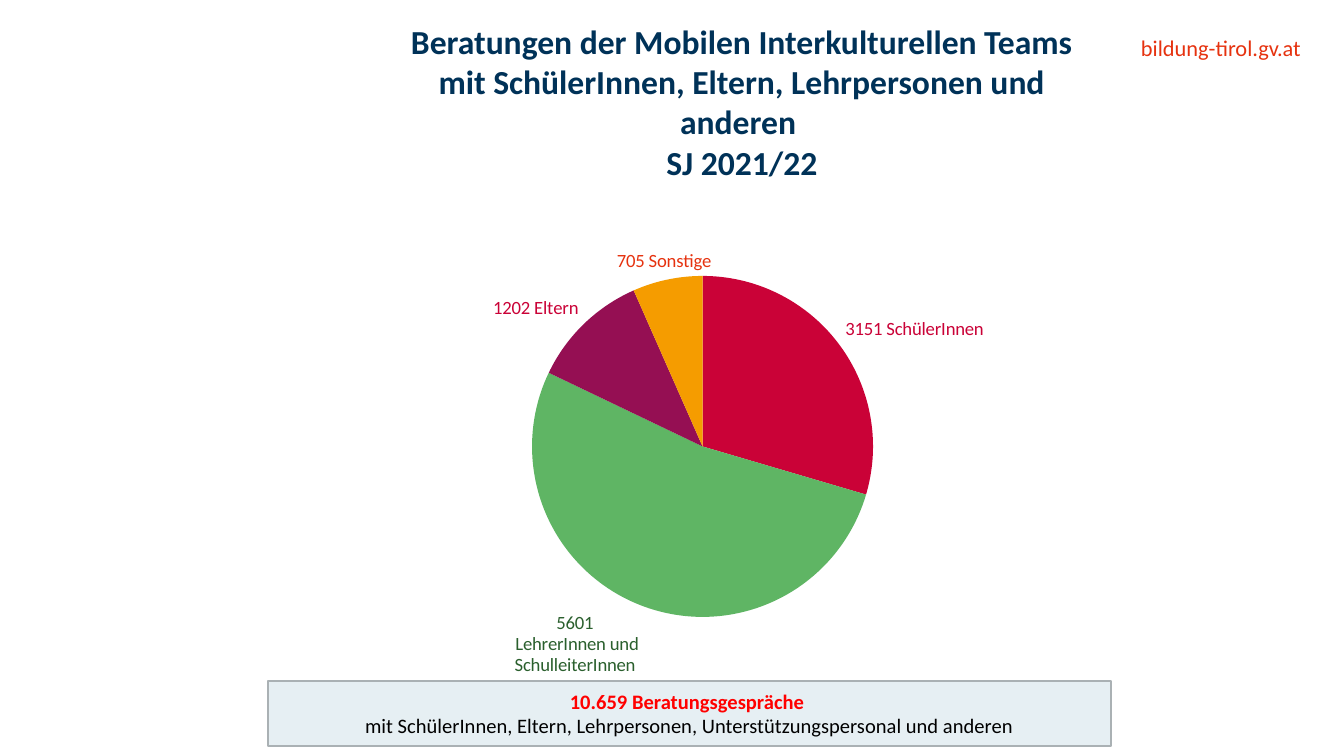
import pptx
import pptx.chart.data
import pptx.dml.color
import pptx.enum.chart
import pptx.enum.shapes
import pptx.enum.text
import pptx.util
import lxml.etree

PX = 914400 / 134.4
C = "{http://schemas.openxmlformats.org/drawingml/2006/chart}"
ALIGN = pptx.enum.text.PP_ALIGN


def style(font, colour, **values):
    font.color.rgb = pptx.dml.color.RGBColor.from_string(colour)
    for key, value in {"name": "Calibri", **values}.items():
        setattr(font, key, value)


def manual_layout(**values):
    layout = lxml.etree.Element(C + "layout")
    manual = lxml.etree.SubElement(layout, C + "manualLayout")
    for tag, value in values.items():
        lxml.etree.SubElement(manual, C + tag, val=str(value))
    return layout


deck = pptx.Presentation()
deck.slide_width, deck.slide_height = round(1344 * PX), round(756 * PX)
slide = deck.slides.add_slide(deck.slide_layouts[6])

# Web address
address = slide.shapes.add_textbox(
    *[round(length * PX) for length in (977, 34, 324, 27)]).text_frame
for key in ("margin_left", "margin_top", "margin_right", "margin_bottom"):
    setattr(address, key, 0)
address.word_wrap = True
address.text = "bildung-tirol.gv.at"
address.paragraphs[0].alignment = ALIGN.RIGHT
style(address.paragraphs[0].runs[0].font, "E6320F", size=pptx.util.Pt(12))

# Pie of consultations: category, count, slice colour, label colour, label text
groups = [
    ("SchülerInnen", 3151, "CA0237", "CA0237", "3151 SchülerInnen"),
    ("LehrerInnen und SchulleiterInnen", 5601, "5FB564", "2A5F2D",
     "5601\n LehrerInnen und SchulleiterInnen"),
    ("Eltern", 1202, "950F53", "CA0237", "1202 Eltern"),
    ("Sonstige", 705, "F59C00", "E6320F", "705 Sonstige"),
]
counts = pptx.chart.data.CategoryChartData(number_format="0")
counts.categories = [group[0] for group in groups]
counts.add_series("Series 1", [group[1] for group in groups])
pie = slide.shapes.add_chart(
    pptx.enum.chart.XL_CHART_TYPE.PIE,
    *[round(length * PX) for length in (335, 228, 758, 470)], counts).chart
pie.has_legend = False
pie.has_title = False
style(pie.font, "000000", size=pptx.util.Pt(10))
pie.plots[0].vary_by_categories = True
consultations = pie.plots[0].series[0]

for point_index, (_, _, fill, ink, caption_text) in enumerate(groups):
    part = consultations.points[point_index]
    part.format.fill.solid()
    part.format.fill.fore_color.rgb = pptx.dml.color.RGBColor.from_string(fill)
    caption = part.data_label.text_frame
    caption.text = caption_text
    for paragraph in caption.paragraphs:
        style(paragraph.runs[0].font, ink, size=pptx.util.Pt(10))
    part.data_label.position = pptx.enum.chart.XL_LABEL_POSITION.OUTSIDE_END

captions = consultations.data_labels
for key, value in {"show_value": True, "show_category_name": True,
                   "show_percentage": False, "show_legend_key": False,
                   "position": pptx.enum.chart.XL_LABEL_POSITION.OUTSIDE_END}.items():
    setattr(captions, key, value)
for label in captions._element.findall(C + "dLbl"):
    label.find(C + "showCatName").set("val", "1")

# The last label moves right, clear of its neighbour
label.find(C + "idx").addnext(manual_layout(x=0.06, y=0))

# Fixed place of the pie inside the chart
plot_area = pie.plots[0]._element.getparent()
for old in plot_area.findall(C + "layout"):
    plot_area.remove(old)
plot_area.insert(0, manual_layout(layoutTarget="inner", xMode="edge", yMode="edge",
                                  x=0.26, y=0.1, w=0.45, h=0.73))

# Title
title = slide.shapes.add_textbox(
    *[round(length * PX) for length in (374, 14, 736, 176)]).text_frame
title.word_wrap = True
title.text = ("Beratungen der Mobilen Interkulturellen Teams mit SchülerInnen, "
              "Eltern, Lehrpersonen und anderen \vSJ 2021/22")
title.paragraphs[0].alignment = ALIGN.CENTER
for run in title.paragraphs[0].runs:
    style(run.font, "003258", size=pptx.util.Pt(18), bold=True)

# Total
total = slide.shapes.add_shape(
    pptx.enum.shapes.MSO_SHAPE.RECTANGLE,
    *[round(length * PX) for length in (268, 681, 843, 65)])
total.shadow.inherit = False
total.fill.solid()
total.fill.fore_color.rgb = pptx.dml.color.RGBColor.from_string("E6EFF3")
total.line.color.rgb = pptx.dml.color.RGBColor.from_string("AAB1B4")
total.line.width = pptx.util.Pt(0.75)
total.text_frame.word_wrap = True
total.text_frame.vertical_anchor = pptx.enum.text.MSO_ANCHOR.MIDDLE
total.text_frame.text = (
    "10.659 Beratungsgespräche \n"
    "mit SchülerInnen, Eltern, Lehrpersonen, Unterstützungspersonal und anderen")
for paragraph, ink, bold in zip(total.text_frame.paragraphs,
                                ("FF0000", "000000"), (True, False)):
    paragraph.alignment = ALIGN.CENTER
    style(paragraph.runs[0].font, ink, size=pptx.util.Pt(11), bold=bold)

deck.save("out.pptx")
